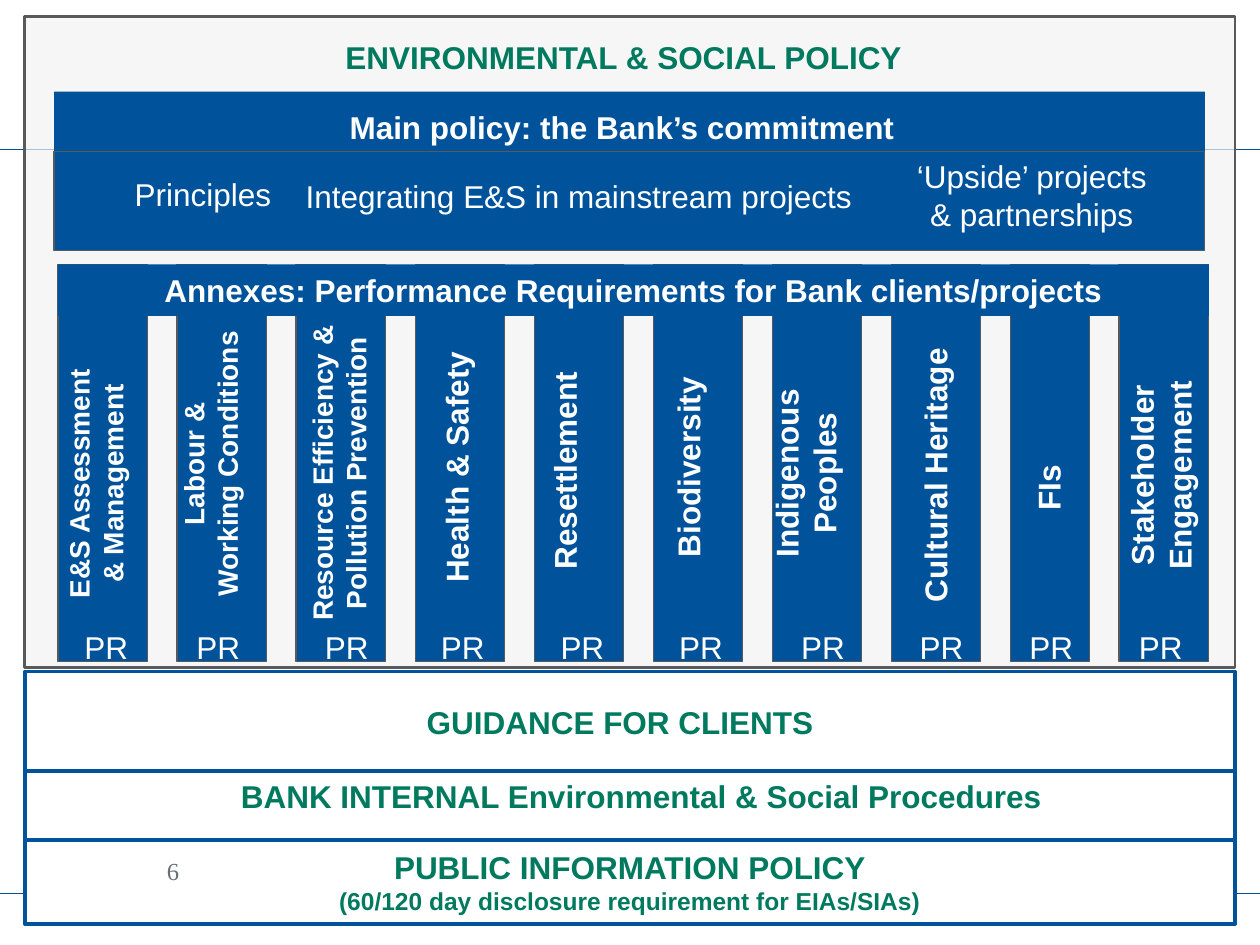
import pptx
import pptx.util
import pptx.dml.color
import pptx.enum.shapes
import pptx.enum.text
import pptx.oxml.ns
from lxml import etree
from pptx.util import Cm, Pt

COLORS = {
    "blue": "00539B", "rule": "005198", "green": "007A5F", "white": "FFFFFF",
    "panel": "F2F2F2", "border": "58595B", "number": "666F74",
}
ALIGN = pptx.enum.text.PP_ALIGN
ANCHOR = pptx.enum.text.MSO_ANCHOR
rgb = {name: pptx.dml.color.RGBColor.from_string(value) for name, value in COLORS.items()}
qn = pptx.oxml.ns.qn


def write(shape, lines, color="white", sizes=(18,), bold=True,
          align=ALIGN.CENTER, anchor=ANCHOR.TOP, font="Arial"):
    """Fill a shape with one paragraph per line; the last size carries on."""
    frame = shape.text_frame
    frame.word_wrap = True
    frame.vertical_anchor = anchor
    for index, line in enumerate(lines):
        paragraph = frame.paragraphs[0] if index == 0 else frame.add_paragraph()
        paragraph.alignment = align
        run = paragraph.add_run()
        run.text = line
        run.font.name = font
        run.font.size = Pt(sizes[min(index, len(sizes) - 1)])
        run.font.bold = bold
        run.font.color.rgb = rgb[color]


def add_rect(left, top, width, height, fill=None, line=None, weight=0.75):
    rect = slide.shapes.add_shape(pptx.enum.shapes.MSO_SHAPE.RECTANGLE,
                                  Cm(left), Cm(top), Cm(width), Cm(height))
    rect.shadow.inherit = False
    if fill:
        rect.fill.solid()
        rect.fill.fore_color.rgb = rgb[fill]
    else:
        rect.fill.background()
    if line:
        rect.line.color.rgb = rgb[line]
        rect.line.width = Pt(weight)
    else:
        rect.line.fill.background()
    return rect


deck = pptx.Presentation()
deck.slide_width, deck.slide_height = Cm(25.4), Cm(19.05)
slide = deck.slides.add_slide(deck.slide_layouts[5])
textbox = slide.shapes.add_textbox

# Thin rules across the slide
for y in (3, 18.01):
    rule = slide.shapes.add_connector(pptx.enum.shapes.MSO_CONNECTOR.STRAIGHT,
                                      Cm(0), Cm(y), Cm(25.4), Cm(y))
    rule.line.color.rgb = rgb["rule"]
    rule.line.width = Pt(0.25)
    etree.SubElement(rule.element.spPr, qn("a:effectLst"))

# Lower bands
procedures = textbox(Cm(4.43), Cm(15.54), Cm(17), Cm(1.02))
write(procedures, ["BANK INTERNAL Environmental & Social Procedures"], "green",
      anchor=ANCHOR.MIDDLE)
add_rect(0.5, 15.54, 24.4, 1.4, line="blue", weight=2)
disclosure = add_rect(0.5, 16.93, 24.4, 1.7, "white", "blue", 2)
write(disclosure, ["PUBLIC INFORMATION POLICY",
                   "(60/120 day disclosure requirement for EIAs/SIAs)"],
      "green", sizes=(18, 14), anchor=ANCHOR.MIDDLE)
add_rect(0.5, 13.54, 24.4, 2, "white", "blue", 2)
guidance = textbox(Cm(8.2), Cm(14.05), Cm(8.6), Cm(1.02))
write(guidance, ["GUIDANCE FOR CLIENTS"], "green")

# Policy panel and title
panel = add_rect(0.5, 0.33, 24.4, 13.13, "panel", "border", 1.5)
panel_color = panel.element.spPr.find(".//" + qn("a:srgbClr"))
etree.SubElement(panel_color, qn("a:alpha")).set("val", "69000")

title = slide.shapes.title
title.left, title.top, title.width, title.height = Cm(6.71), Cm(0.64), Cm(11.99), Cm(1.02)
write(title, ["ENVIRONMENTAL & SOCIAL POLICY"], "green", align=ALIGN.LEFT)
title.element.getparent().append(title.element)  # in front of the panel

# Performance requirements: lines, font size, label left, label centre, code left
requirements = [
    (["E&S Assessment", "& Management"], 16, 1.12, 9.75, 1.45),
    (["Labour &", "Working Conditions"], 16, 3.43, 9.35, 3.71),
    (["Resource Efficiency &", "Pollution Prevention"], 16, 6.02, 9.54, 6.3),
    (["Health & Safety"], 18, 8.69, 9.42, 8.64),
    (["Resettlement"], 18, 10.87, 9.49, 11.05),
    (["Biodiversity"], 18, 13.36, 9.42, 13.44),
    (["Indigenous", "Peoples"], 18, 15.34, 9.54, 15.9),
    (["Cultural Heritage"], 18, 18.34, 9.58, 18.29),
    (["FIs"], 18, 20.62, 9.84, 20.5),
    (["Stakeholder", "Engagement"], 18, 22.5, 9.58, 22.71),
]
FIRST_LEFT, PITCH, LAST_LEFT = 1.17, 2.4, 22.56
TOP, BOTTOM, LABEL_LENGTH = 5.33, 13.33, 6.4

for column, (lines, size, label_left, centre, code_left) in enumerate(requirements):
    left = LAST_LEFT if column == 9 else FIRST_LEFT + PITCH * column
    width = 1.6 if column == 8 else 1.8
    add_rect(left, TOP, width, BOTTOM - TOP, "blue", "border")

    label_width = 0.51 + len(lines) * size * 0.043
    label = textbox(Cm(label_left), Cm(centre - LABEL_LENGTH / 2),
                    Cm(label_width), Cm(LABEL_LENGTH))
    label.text_frame.margin_top = label.text_frame.margin_bottom = 0
    label.element.find(".//" + qn("a:bodyPr")).set("vert", "vert270")
    write(label, lines, sizes=(size,))

    code = textbox(Cm(code_left), Cm(12.54), Cm(1.47), Cm(0.76))
    code.text_frame.margin_right = 0
    write(code, ["PR"], bold=False, align=ALIGN.LEFT)

annexes = add_rect(FIRST_LEFT, TOP, 23.2, 1.04, "blue")
write(annexes, ["Annexes: Performance Requirements for Bank clients/projects"])

# Main policy
add_rect(1.09, 1.85, 23.2, 3.2, "blue")
commitment = textbox(Cm(1.09), Cm(2.06), Cm(22.9), Cm(1.02))
write(commitment, ["Main policy: the Bank’s commitment"])
themes = [
    (["Principles"], 1.09, 3.4, 6),
    (["Integrating E&S in mainstream projects"], 5.67, 3.45, 12),
    (["‘Upside’ projects", "& partnerships"], 17.3, 3.05, 7),
]
for lines, left, top, width in themes:
    theme = textbox(Cm(left), Cm(top), Cm(width), Cm(0.25 + 0.76 * len(lines)))
    write(theme, lines, bold=False)
add_rect(1.09, 3.05, 23.2, 2, line="border")

page_number = textbox(Cm(0.66), Cm(17.04), Cm(2.95), Cm(1.04))
page_frame = page_number.text_frame
page_frame.margin_left = page_frame.margin_right = 0
page_frame.margin_top = page_frame.margin_bottom = 0
write(page_number, ["6"], "number", sizes=(14,), bold=False, align=ALIGN.RIGHT,
      anchor=ANCHOR.MIDDLE, font="Times New Roman")

deck.save("out.pptx")
